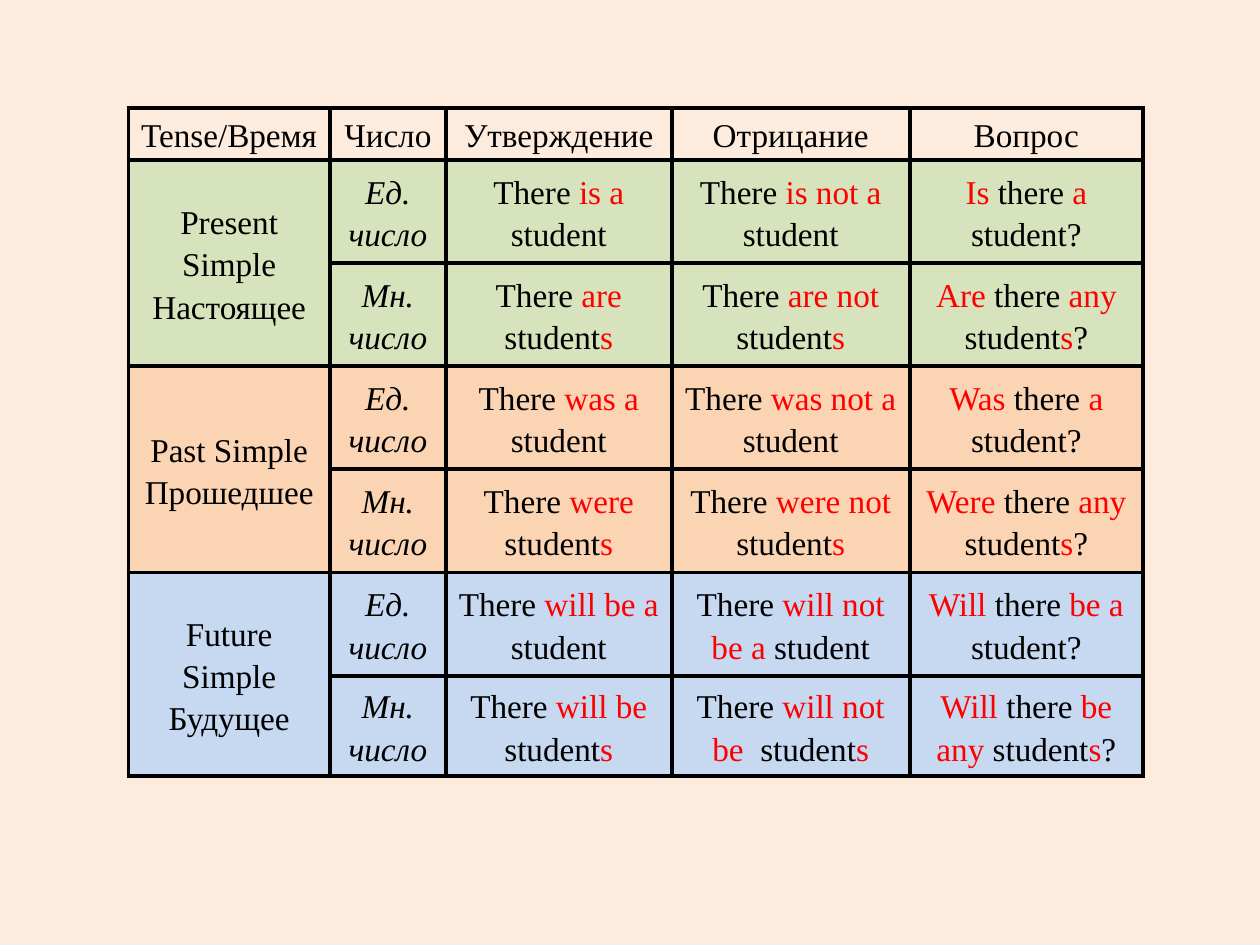
from dataclasses import dataclass

from lxml import etree
from pptx import Presentation
from pptx import util as u
from pptx.dml import color
from pptx.enum import text
from pptx.oxml import ns


@dataclass(frozen=True)
class Theme:
    font: str = "Times New Roman"
    size: float = 19
    line_spacing: float = 1.15
    border_width: float = 2.5
    page: str = "FDECDE"
    ink: str = "000000"
    accent: str = "FF0000"
    present: str = "D6E3BC"
    past: str = "FBD4B4"
    future: str = "C6D9F1"


THEME = Theme()
TABLE_BOX = (2.59, 2.18, 20.45, 13.47)
COLUMN_WIDTHS = (4.06, 2.34, 4.55, 4.8, 4.7)
ROW_HEIGHTS = (1.04, 2.08, 2.08, 2.08, 2.08, 2.08, 2.03)
HEADINGS = ("Tense/Время", "Число", "Утверждение", "Отрицание", "Вопрос")
NUMBERS = ("Ед. число", "Мн. число")
TENSES = (
    (("Present Simple", "Настоящее"), THEME.present, (
        ("There *is a* student", "There *is not a* student",
         "*Is* there *a* student?"),
        ("There *are* student*s*", "There *are not* student*s*",
         "*Are* there *any *student*s*?"))),
    (("Past Simple", "Прошедшее"), THEME.past, (
        ("There *was a* student", "There *was not a* student",
         "*Was* there *a* student?"),
        ("There *were* student*s*", "There *were not* student*s*",
         "*Were* there *any *student*s*?"))),
    (("Future Simple", "Будущее"), THEME.future, (
        ("There *will be a* student", "There *will not be a* student",
         "*Will* there *be a* student?"),
        ("There *will be *student*s*", "There *will not be  *student*s*",
         "*Will* there *be any *student*s*?"))),
)
CELL_FORMAT = {
    "vertical_anchor": text.MSO_ANCHOR.MIDDLE,
    "margin_left": u.Cm(0.18), "margin_right": u.Cm(0.18),
    "margin_top": 0, "margin_bottom": 0,
}
PARA_FORMAT = {"alignment": text.PP_ALIGN.CENTER, "line_spacing": THEME.line_spacing}
FONT_FORMAT = {"name": THEME.font, "size": u.Pt(THEME.size), "bold": False}


def apply_format(target, values):
    for name, value in values.items():
        setattr(target, name, value)


def fill_para(para, marked_text, italic):
    apply_format(para, PARA_FORMAT)
    for index, part in enumerate(marked_text.split("*")):
        if part:
            span = para.add_run()
            span.text = part
            apply_format(span.font, FONT_FORMAT | {"italic": italic})
            shade = THEME.accent if index % 2 else THEME.ink
            span.font.color.rgb = color.RGBColor.from_string(shade)


def add_borders(cell):
    properties = cell._tc.get_or_add_tcPr()
    for index, side in enumerate(("lnL", "lnR", "lnT", "lnB")):
        line = etree.Element(ns.qn(f"a:{side}"), w=str(u.Pt(THEME.border_width)))
        fill = etree.SubElement(line, ns.qn("a:solidFill"))
        etree.SubElement(fill, ns.qn("a:srgbClr"), val=THEME.ink)
        properties.insert(index, line)


def style_cell(cell, fill=None):
    apply_format(cell, CELL_FORMAT)
    if fill:
        cell.fill.solid()
        cell.fill.fore_color.rgb = color.RGBColor.from_string(fill)
    else:
        cell.fill.background()
    add_borders(cell)


def write_cell(cell, lines, italic=False):
    frame = cell.text_frame
    for index, line in enumerate(lines):
        para = frame.add_paragraph() if index else frame.paragraphs[0]
        fill_para(para, line, italic)


def add_tense(table, top_row, names, fill, sentences):
    for row, (number, forms) in enumerate(zip(NUMBERS, sentences), top_row):
        for column in range(len(COLUMN_WIDTHS)):
            style_cell(table.cell(row, column), fill)
        write_cell(table.cell(row, 1), [number], italic=True)
        for column, form in enumerate(forms, 2):
            write_cell(table.cell(row, column), [form])
    tense_cell = table.cell(top_row, 0)
    tense_cell.merge(table.cell(top_row + 1, 0))
    write_cell(tense_cell, names)


def add_tense_table(page, box):
    table = page.shapes.add_table(
        len(ROW_HEIGHTS), len(COLUMN_WIDTHS), *map(u.Cm, box)).table
    apply_format(table, {"first_row": False, "horz_banding": False})
    for column, width in zip(table.columns, COLUMN_WIDTHS):
        column.width = u.Cm(width)
    for row, height in zip(table.rows, ROW_HEIGHTS):
        row.height = u.Cm(height)
    for column, heading in enumerate(HEADINGS):
        style_cell(table.cell(0, column))
        write_cell(table.cell(0, column), [heading])
    for index, tense in enumerate(TENSES):
        add_tense(table, 1 + index * len(NUMBERS), *tense)


def main():
    deck = Presentation()
    apply_format(deck, {"slide_width": u.Cm(25.4), "slide_height": u.Cm(19.05)})
    page = deck.slides.add_slide(deck.slide_layouts[6])
    page.background.fill.solid()
    page.background.fill.fore_color.rgb = color.RGBColor.from_string(THEME.page)
    add_tense_table(page, TABLE_BOX)
    deck.save("out.pptx")


if __name__ == "__main__":
    main()
